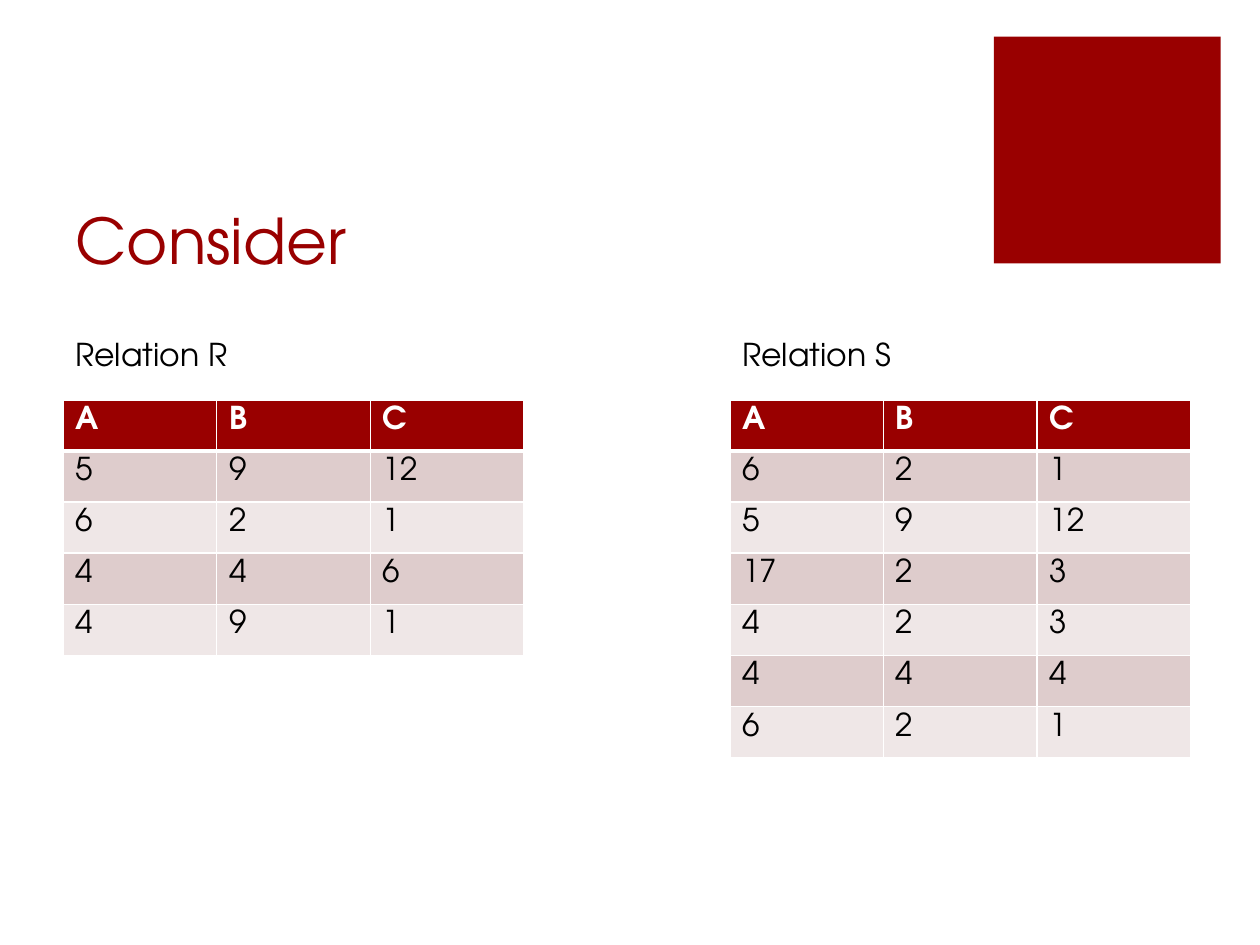
from dataclasses import dataclass

from lxml.etree import SubElement
from pptx import Presentation
from pptx.dml.color import RGBColor
from pptx.enum.shapes import MSO_SHAPE
from pptx.enum.text import MSO_ANCHOR, MSO_AUTO_SIZE, PP_ALIGN
from pptx.oxml.ns import qn
from pptx.slide import Slide
from pptx.table import _Cell
from pptx.text.text import _Paragraph
from pptx.util import Pt

FONT = "TeX Gyre Adventor"
RED = RGBColor(0x99, 0x00, 0x00)
DARK_BAND = RGBColor(0xDE, 0xCC, 0xCC)
LIGHT_BAND = RGBColor(0xEF, 0xE7, 0xE7)
WHITE = RGBColor(0xFF, 0xFF, 0xFF)
BLACK = RGBColor(0x00, 0x00, 0x00)

COLUMNS = ("A", "B", "C")
COLUMN_WIDTH = 87.8
ROW_HEIGHT = 29.2
TABLE_TOP = 228.5
CAPTION_TOP = 188
CAPTION_HEIGHT = 29


@dataclass(frozen=True)
class Relation:
    caption: str
    left: float
    caption_width: float
    tuples: tuple[tuple[int, ...], ...]


RELATIONS = (
    Relation("Relation R", 36, 263.5,
             ((5, 9, 12), (6, 2, 1), (4, 4, 6), (4, 9, 1))),
    Relation("Relation S", 417, 234,
             ((6, 2, 1), (5, 9, 12), (17, 2, 3), (4, 2, 3), (4, 4, 4), (6, 2, 1))),
)


def style_text(paragraph: _Paragraph, size: float, color: RGBColor, bold: bool = False) -> None:
    font = paragraph.font
    font.name = FONT
    font.size = Pt(size)
    font.bold = bold
    font.color.rgb = color


def set_borders(cell: _Cell, top: float, bottom: float) -> None:
    """Draw white borders; the schema wants them ahead of the cell fill."""
    properties = cell._tc.get_or_add_tcPr()
    widths = {"a:lnL": 1, "a:lnR": 1, "a:lnT": top, "a:lnB": bottom}
    for tag, width in widths.items():
        line = SubElement(properties, qn(tag), w=str(Pt(width)))
        fill = SubElement(line, qn("a:solidFill"))
        SubElement(fill, qn("a:srgbClr"), val=str(WHITE))


def add_caption(slide: Slide, relation: Relation) -> None:
    caption = slide.shapes.add_textbox(Pt(relation.left), Pt(CAPTION_TOP),
                                       Pt(relation.caption_width), Pt(CAPTION_HEIGHT))
    frame = caption.text_frame
    frame.word_wrap = True
    frame.auto_size = MSO_AUTO_SIZE.SHAPE_TO_FIT_TEXT
    frame.text = relation.caption
    style_text(frame.paragraphs[0], 18, BLACK)


def add_relation_table(slide: Slide, relation: Relation) -> None:
    rows = (COLUMNS, *relation.tuples)
    table = slide.shapes.add_table(
        len(rows), len(COLUMNS), Pt(relation.left), Pt(TABLE_TOP),
        Pt(COLUMN_WIDTH * len(COLUMNS)), Pt(ROW_HEIGHT * len(rows))).table
    for row_index, values in enumerate(rows):
        is_header = row_index == 0
        band = RED if is_header else DARK_BAND if row_index % 2 else LIGHT_BAND
        for column_index, value in enumerate(values):
            cell = table.cell(row_index, column_index)
            cell.text = str(value)
            style_text(cell.text_frame.paragraphs[0], 18,
                       WHITE if is_header else BLACK, bold=is_header)
            # A thicker rule separates the header from the tuples
            set_borders(cell, top=3 if row_index == 1 else 1, bottom=3 if is_header else 1)
            cell.fill.solid()
            cell.fill.fore_color.rgb = band


def main() -> None:
    presentation = Presentation()
    presentation.slide_width, presentation.slide_height = Pt(720), Pt(540)
    slide = presentation.slides.add_slide(presentation.slide_layouts[5])

    # Corner square
    square = slide.shapes.add_shape(MSO_SHAPE.RECTANGLE, Pt(568), Pt(21), Pt(129.6), Pt(129.6))
    square.shadow.inherit = False
    square.fill.solid()
    square.fill.fore_color.rgb = RED
    square.line.fill.background()

    # Title
    title = slide.shapes.title
    title.left, title.top, title.width, title.height = Pt(36), Pt(72), Pt(512.6), Pt(90)
    title.text_frame.text = "Consider"
    title.text_frame.vertical_anchor = MSO_ANCHOR.BOTTOM
    heading = title.text_frame.paragraphs[0]
    heading.alignment = PP_ALIGN.LEFT
    style_text(heading, 36, RED)

    # Relations with their captions
    for relation in RELATIONS:
        add_relation_table(slide, relation)
        add_caption(slide, relation)

    presentation.save("out.pptx")


if __name__ == "__main__":
    main()
